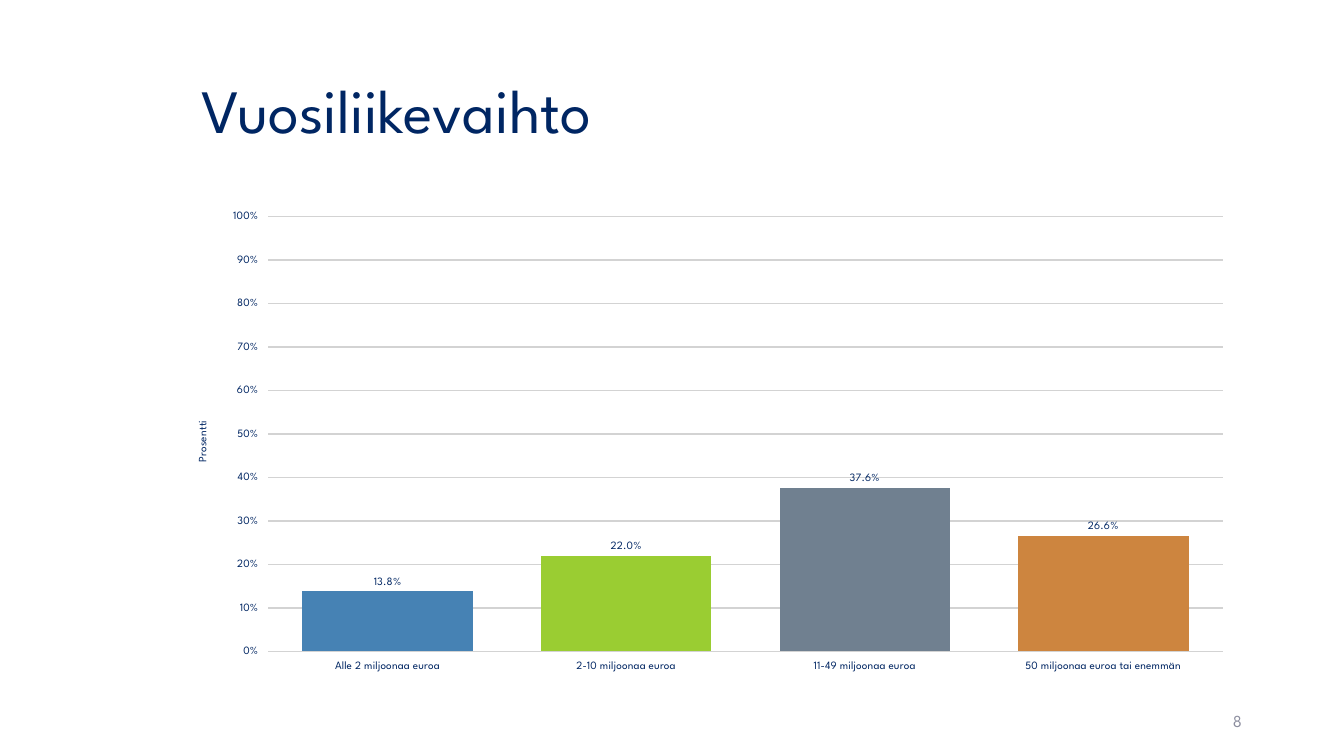
from dataclasses import dataclass

from pptx import Presentation
from pptx.chart.data import CategoryChartData
from pptx.dml.color import RGBColor
from pptx.enum.chart import XL_CHART_TYPE, XL_LABEL_POSITION, XL_TICK_MARK
from pptx.enum.text import MSO_ANCHOR, PP_ALIGN
from pptx.slide import Slide
from pptx.util import Cm, Pt

FONT = "League Spartan"
COLORS = {
    "navy": "002663",
    "muted": "8C8E9F",
    "grid": "D3D3D3",
    "blue": "4682B4",
    "green": "9ACD32",
    "slate": "708090",
    "copper": "CD853F",
}


@dataclass
class Label:
    text: str
    left: float
    top: float
    width: float
    height: float
    size: int
    color: str
    align: PP_ALIGN
    inset: float = 0.25
    spacing: float = 1.0


@dataclass
class Turnover:
    category: str
    share: float
    color: str


LABELS = [
    Label("Vuosiliikevaihto", 4.45, 1.02, 26.9, 3.68, 44, "navy", PP_ALIGN.LEFT, 0.63, 0.9),
    Label("8", 23.93, 17.65, 7.62, 1.02, 12, "muted", PP_ALIGN.RIGHT),
]
TURNOVERS = [
    Turnover("Alle 2 miljoonaa euroa", 0.138, "blue"),
    Turnover("2-10 miljoonaa euroa", 0.22, "green"),
    Turnover("11-49 miljoonaa euroa", 0.376, "slate"),
    Turnover("50 miljoonaa euroa tai enemmän", 0.266, "copper"),
]


def rgb(name: str) -> RGBColor:
    return RGBColor.from_string(COLORS[name])


def style_font(font, size: int, color: str = "navy") -> None:
    font.name = FONT
    font.size = Pt(size)
    font.bold = False
    font.color.rgb = rgb(color)


def add_label(s: Slide, label: Label) -> None:
    sp = s.shapes.add_textbox(Cm(label.left), Cm(label.top), Cm(label.width), Cm(label.height))
    tf = sp.text_frame
    tf.word_wrap = True
    tf.vertical_anchor = MSO_ANCHOR.MIDDLE
    tf.margin_left = Cm(label.inset)
    tf.text = label.text
    p = tf.paragraphs[0]
    p.alignment = label.align
    p.line_spacing = label.spacing
    style_font(p.runs[0].font, label.size, label.color)


def add_turnover_chart(s: Slide, turnovers: list[Turnover]) -> None:
    data = CategoryChartData()
    data.categories = [t.category for t in turnovers]
    data.add_series("Series 1", [t.share for t in turnovers])
    chart = s.shapes.add_chart(
        XL_CHART_TYPE.COLUMN_CLUSTERED, Cm(4.45), Cm(5.08), Cm(26.9), Cm(12.09), data
    ).chart
    chart.has_legend = False
    chart.has_title = False
    style_font(chart.font, 18)

    for axis in (chart.category_axis, chart.value_axis):
        axis.major_tick_mark = XL_TICK_MARK.OUTSIDE
        axis.format.line.fill.background()
        style_font(axis.tick_labels.font, 8)

    axis = chart.value_axis
    axis.minimum_scale, axis.maximum_scale, axis.major_unit = 0, 1, 0.1
    axis.tick_labels.number_format = "0%"
    axis.tick_labels.number_format_is_linked = False
    axis.major_gridlines.format.line.color.rgb = rgb("grid")
    axis.major_gridlines.format.line.width = Pt(1)
    p = axis.axis_title.text_frame.paragraphs[0]
    p.text = "Prosentti"
    style_font(p.runs[0].font, 8)

    plot = chart.plots[0]
    plot.gap_width = 40
    plot.overlap = -2
    plot.vary_by_categories = False
    plot.has_data_labels = True
    labels = plot.data_labels
    labels.show_value = True
    labels.number_format = "0.0%"
    labels.number_format_is_linked = False
    labels.position = XL_LABEL_POSITION.OUTSIDE_END
    style_font(labels.font, 8)

    for i, turnover in enumerate(turnovers):
        fill = plot.series[0].points[i].format.fill
        fill.solid()
        fill.fore_color.rgb = rgb(turnover.color)


def main() -> None:
    prs = Presentation()
    prs.slide_width, prs.slide_height = Cm(33.87), Cm(19.05)
    s = prs.slides.add_slide(prs.slide_layouts[6])
    for label in LABELS:
        add_label(s, label)
    add_turnover_chart(s, TURNOVERS)
    prs.save("out.pptx")


if __name__ == "__main__":
    main()
